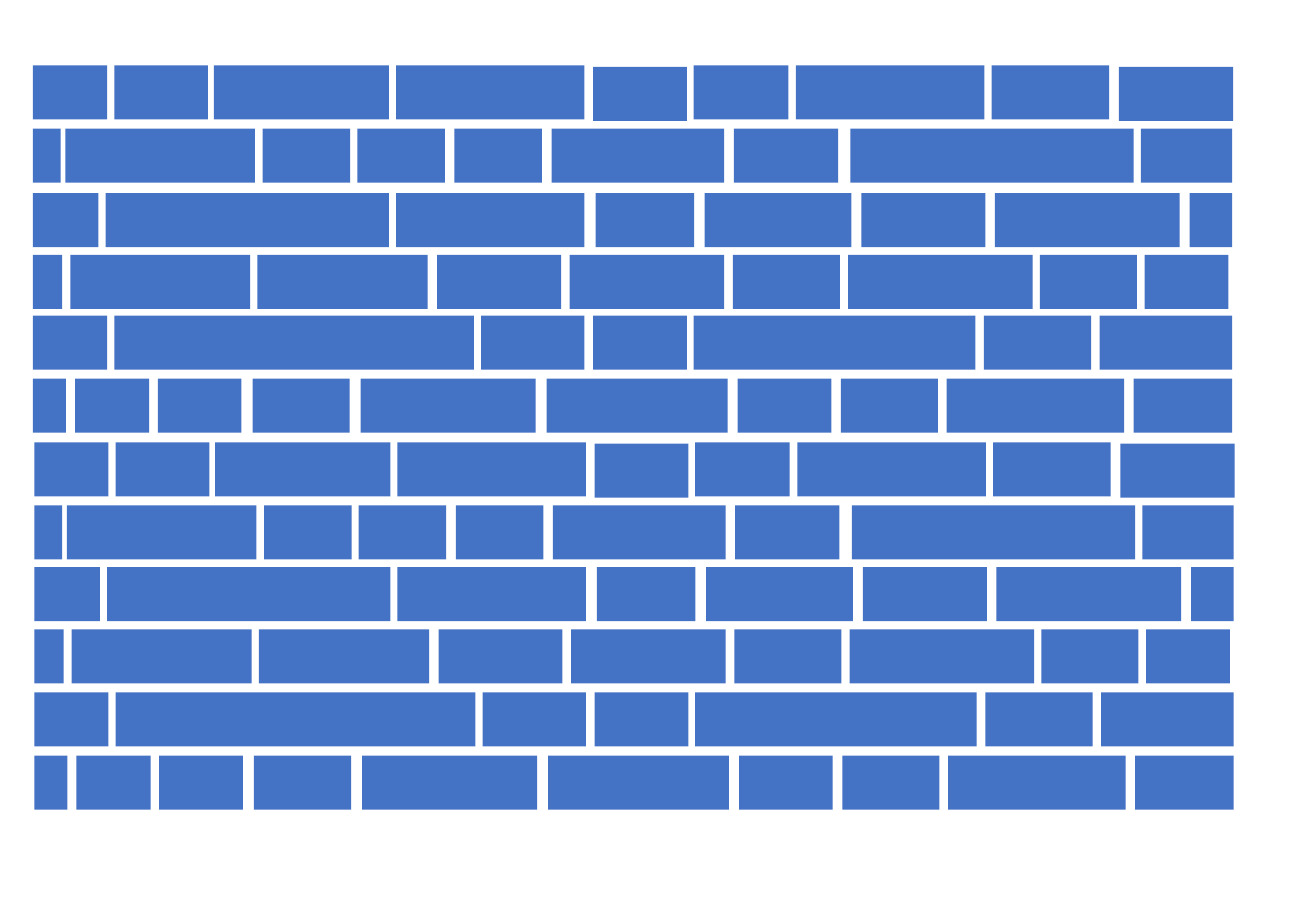
from typing import NamedTuple

from pptx import Presentation
from pptx import util as u
from pptx.dml import color
from pptx.enum import shapes
from pptx.shapes.shapetree import GroupShapes

COLOURS = {"brick": "4472C4", "background": "FFFFFF"}
BRICK_HEIGHT = 1.13
UPPER_TOPS = (1.37, 2.69, 4.04, 5.33, 6.60, 7.92)
LOWER_TOPS = (9.25, 10.57, 11.86, 13.16, 14.48, 15.80)
LOWER_SHIFT = 0.03


class Brick(NamedTuple):
    """Lengths in cm; drop is the distance below the top of the course."""
    left: float
    width: float
    drop: float = 0


COURSES = (
    (Brick(0.69, 1.55), Brick(2.39, 1.96), Brick(4.47, 3.66),
     Brick(8.28, 3.94), Brick(12.40, 1.96, drop=0.03), Brick(14.50, 1.98),
     Brick(16.64, 3.94), Brick(20.73, 2.46), Brick(23.39, 2.39, drop=0.03)),
    (Brick(0.69, 0.58), Brick(1.37, 3.96), Brick(5.49, 1.83),
     Brick(7.47, 1.83), Brick(9.50, 1.83), Brick(11.53, 3.61),
     Brick(15.34, 2.18), Brick(17.78, 5.92), Brick(23.85, 1.91)),
    (Brick(0.69, 1.37), Brick(2.21, 5.92), Brick(8.28, 3.94),
     Brick(12.45, 2.06), Brick(14.73, 3.07), Brick(18.01, 2.59),
     Brick(20.80, 3.86), Brick(24.87, 0.89)),
    (Brick(0.69, 0.61), Brick(1.47, 3.76), Brick(5.38, 3.56),
     Brick(9.14, 2.59), Brick(11.91, 3.23), Brick(15.32, 2.24),
     Brick(17.73, 3.86), Brick(21.74, 2.03), Brick(23.93, 1.75)),
    (Brick(0.69, 1.55), Brick(2.39, 7.52), Brick(10.06, 2.16),
     Brick(12.40, 1.96), Brick(14.50, 5.89), Brick(20.57, 2.24),
     Brick(22.99, 2.77)),
    (Brick(0.69, 0.69), Brick(1.57, 1.55), Brick(3.30, 1.75),
     Brick(5.28, 2.03), Brick(7.54, 3.66), Brick(11.43, 3.78),
     Brick(15.42, 1.96), Brick(17.58, 2.03), Brick(19.79, 3.71),
     Brick(23.70, 2.06)),
)


def lay_brick(wall: GroupShapes, brick: Brick, top: float, shift: float) -> None:
    block = wall.add_shape(
        shapes.MSO_SHAPE.RECTANGLE, u.Cm(brick.left + shift),
        u.Cm(top + brick.drop), u.Cm(brick.width), u.Cm(BRICK_HEIGHT))
    block.shadow.inherit = False
    block.fill.solid()
    block.fill.fore_color.rgb = color.RGBColor.from_string(COLOURS["brick"])
    block.line.fill.background()


def lay_courses(wall: GroupShapes, tops: tuple[float, ...], shift: float = 0) -> None:
    """Lay the six courses once, each at its own top."""
    for top, course in zip(tops, COURSES):
        for brick in course:
            lay_brick(wall, brick, top, shift)


def main() -> None:
    deck = Presentation()
    deck.slide_width, deck.slide_height = u.Cm(27.51), u.Cm(19.05)
    slide = deck.slides.add_slide(deck.slide_layouts[6])
    slide.background.fill.solid()
    slide.background.fill.fore_color.rgb = color.RGBColor.from_string(
        COLOURS["background"])

    wall = slide.shapes.add_group_shape().shapes
    lay_courses(wall, UPPER_TOPS)
    lay_courses(wall, LOWER_TOPS, LOWER_SHIFT)
    deck.save("out.pptx")


if __name__ == "__main__":
    main()
